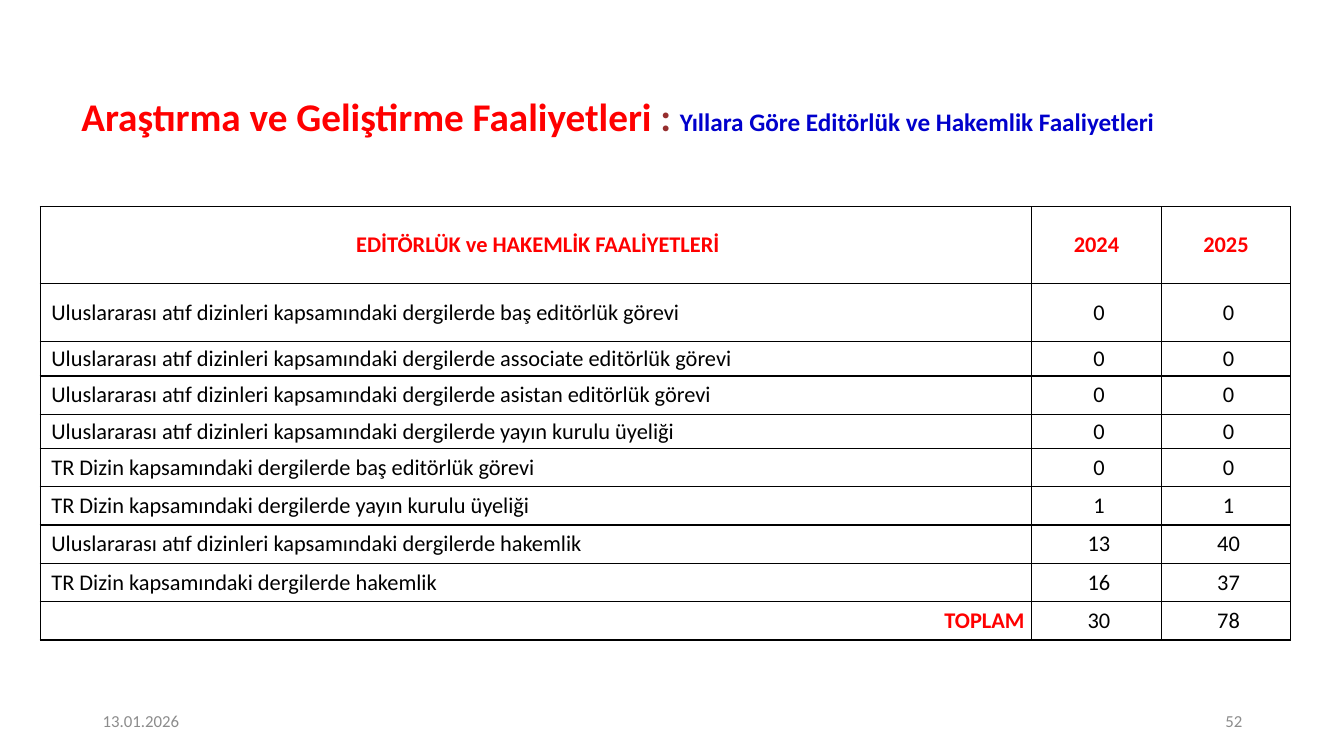
import pptx
import pptx.util
import pptx.dml.color
import pptx.enum.text
import pptx.oxml.ns
from lxml import etree

Inches = pptx.util.Inches
Align = pptx.enum.text.PP_ALIGN
Middle = pptx.enum.text.MSO_ANCHOR.MIDDLE
RED, BLACK, GREY = "FF0000", "000000", "8C8C8C"
INTL = "Uluslararası atıf dizinleri kapsamındaki dergilerde "
TR = "TR Dizin kapsamındaki dergilerde "

HEAD = ("EDİTÖRLÜK ve HAKEMLİK FAALİYETLERİ", 2024, 2025)
ROWS = [
    (INTL + "baş editörlük görevi", 0, 0),
    (INTL + "associate editörlük görevi", 0, 0),
    (INTL + "asistan editörlük görevi", 0, 0),
    (INTL + "yayın kurulu üyeliği", 0, 0),
    (TR + "baş editörlük görevi", 0, 0),
    (TR + "yayın kurulu üyeliği", 1, 1),
    (INTL + "hakemlik", 13, 40),
    (TR + "hakemlik", 16, 37),
]
TOTAL = ("TOPLAM", 30, 78)
WIDTHS = [9.83, 1.29, 1.28]
HEIGHTS = [0.76, 0.58, 0.34, 0.38, 0.34] + [0.38] * 5


def color(code):
    return pptx.dml.color.RGBColor.from_string(code)


def add_run(para, text, size, code, bold=False):
    run = para.add_run()
    run.text = text
    run.font.name = "Calibri"
    run.font.size = pptx.util.Pt(size)
    run.font.bold = bold
    run.font.color.rgb = color(code)


def add_text(slide, box, align):
    frame = slide.shapes.add_textbox(*map(Inches, box)).text_frame
    frame.word_wrap = True
    frame.vertical_anchor = Middle
    para = frame.paragraphs[0]
    para.alignment = align
    return para


def add_title(slide, box):
    para = add_text(slide, box, Align.CENTER)
    para.line_spacing = 0.9
    add_run(para, "Araştırma ve Geliştirme Faaliyetleri ", 28, RED, True)
    add_run(para, ": ", 28, "962E2E", True)
    add_run(para, "Yıllara Göre Editörlük ve Hakemlik Faaliyetleri", 18, "0000CC", True)


def add_border(cell):
    props = cell._tc.get_or_add_tcPr()
    for spot, side in enumerate(("lnL", "lnR", "lnT", "lnB")):
        line = etree.Element(pptx.oxml.ns.qn("a:" + side), w="12700")
        fill = etree.SubElement(line, pptx.oxml.ns.qn("a:solidFill"))
        etree.SubElement(fill, pptx.oxml.ns.qn("a:srgbClr"), val=BLACK)
        props.insert(spot, line)


def fill_cell(cell, text, align, left, red):
    cell.fill.solid()
    cell.fill.fore_color.rgb = color("FFFFFF")
    cell.vertical_anchor = Middle
    cell.margin_left, cell.margin_right = Inches(left), Inches(0.07)
    cell.margin_top = cell.margin_bottom = 0
    add_border(cell)
    para = cell.text_frame.paragraphs[0]
    para.alignment = align
    add_run(para, str(text), 16, RED if red else BLACK, red)


def add_grid(slide, box):
    data = [HEAD, *ROWS, TOTAL]
    table = slide.shapes.add_table(len(data), len(HEAD), *map(Inches, box)).table
    table.first_row = table.horz_banding = False
    for col, width in zip(table.columns, WIDTHS):
        col.width = Inches(width)
    for row, height in zip(table.rows, HEIGHTS):
        row.height = Inches(height)
    for r, row in enumerate(data):
        for c, text in enumerate(row):
            head, total = row is HEAD, row is TOTAL
            align = Align.CENTER
            if c == 0 and not head:
                align = Align.RIGHT if total else Align.LEFT
            # Labels are indented, and values sit just right of centre
            left = 0.07 if head and c else 0.11 if c == 0 else 0.12
            fill_cell(table.cell(r, c), text, align, left, head or (total and c == 0))


def add_foot(slide, box):
    left, top, width, height = box
    part = 3
    # Date on the left, page number on the right
    add_run(add_text(slide, (left, top, part, height), Align.LEFT), "13.01.2026", 12, GREY)
    end = left + width - part
    add_run(add_text(slide, (end, top, part, height), Align.RIGHT), "52", 12, GREY)


def main():
    deck = pptx.Presentation()
    deck.slide_width, deck.slide_height = Inches(13.33), Inches(7.5)
    slide = deck.slides.add_slide(deck.slide_layouts[6])
    add_title(slide, (0.51, 0.77, 11.24, 0.81))
    add_foot(slide, (0.92, 6.95, 11.5, 0.4))
    add_grid(slide, (0.4, 2.05, sum(WIDTHS), sum(HEIGHTS)))
    deck.save("out.pptx")


if __name__ == "__main__":
    main()
